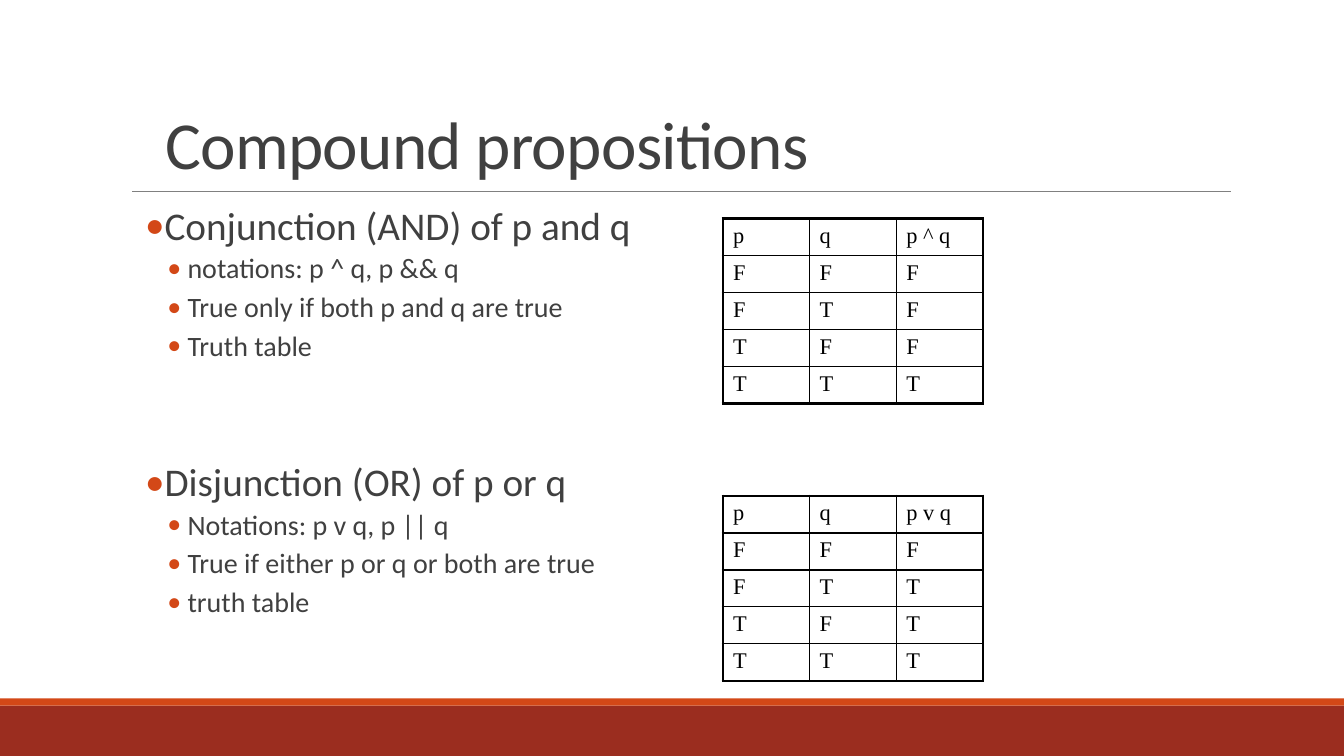
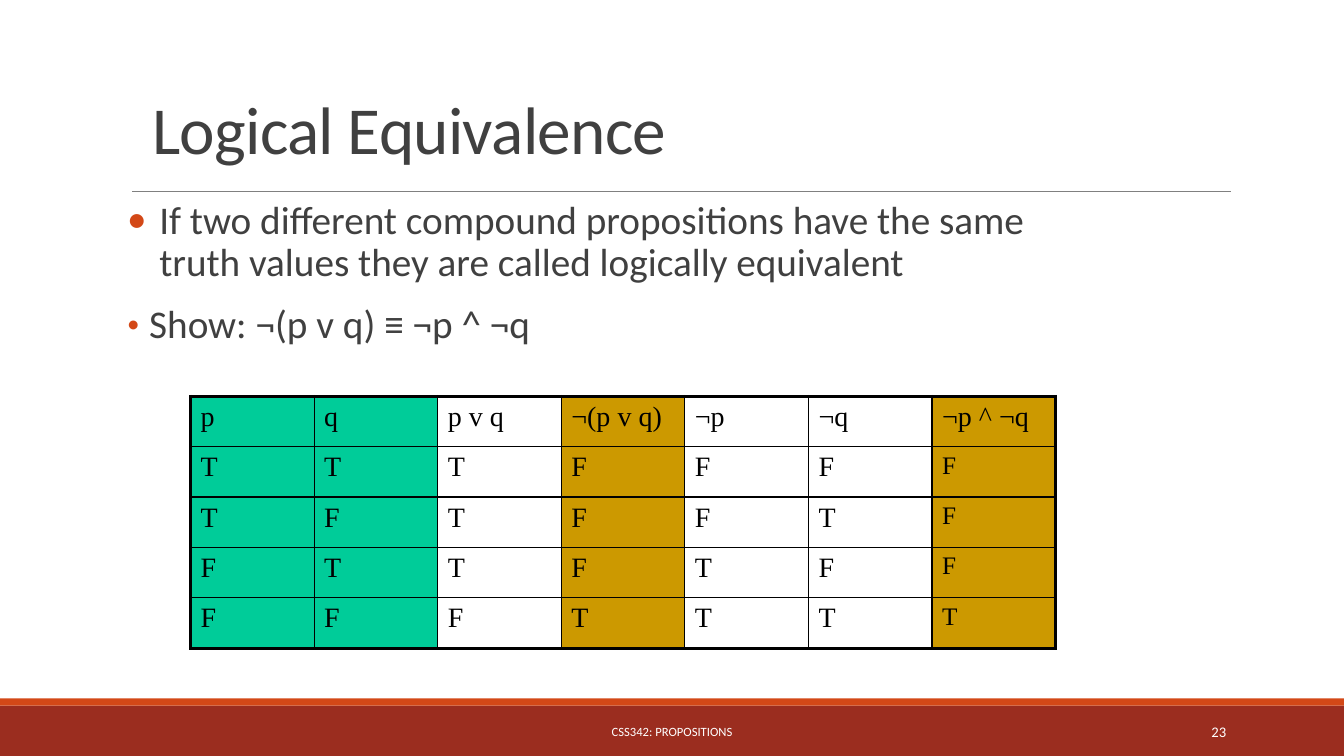
from lxml.etree import SubElement
from pptx import Presentation
from pptx.dml.color import RGBColor
from pptx.enum.shapes import MSO_CONNECTOR, MSO_SHAPE
from pptx.enum.text import MSO_ANCHOR, MSO_AUTO_SIZE, PP_ALIGN
from pptx.oxml.ns import qn
from pptx.util import Inches, Pt

COLORS = {
    "band": "9B2D1F",
    "accent": "D34817",
    "rule": "808080",
    "text": "404040",
    "white": "FFFFFF",
    "black": "000000",
    "inputs": "00CC99",
    "compared": "CC9900",
}
BODY_FONT = "Calibri"
TABLE_FONT = "Times New Roman"
LAYOUT_TITLE_ONLY = 5
THIN, THICK = 1, 2.25


def color(name):
    return RGBColor.from_string(COLORS[name])


def add_span(para, text, size, color_name="text", font=BODY_FONT):
    span = para.add_run()
    span.text = text
    span.font.size = Pt(size)
    span.font.name = font
    span.font.color.rgb = color(color_name)
    return span


# Shared slide parts
def add_bar(page, top, height, color_name):
    bar = page.shapes.add_shape(
        MSO_SHAPE.RECTANGLE, 0, Inches(top), Inches(13.33), Inches(height))
    bar.shadow.inherit = False
    bar.fill.solid()
    bar.fill.fore_color.rgb = color(color_name)
    bar.line.fill.background()


def add_rule(page):
    rule = page.shapes.add_connector(
        MSO_CONNECTOR.STRAIGHT, Inches(1.31), Inches(1.9), Inches(12.21), Inches(1.9))
    rule.line.color.rgb = color("rule")
    rule.line.width = Pt(0.5)
    SubElement(rule.element.spPr, qn("a:effectLst"))


def place_title(page, text, left, top, width, height):
    title = page.shapes.title
    title.left, title.top = Inches(left), Inches(top)
    title.width, title.height = Inches(width), Inches(height)
    frame = title.text_frame
    frame.word_wrap = True
    frame.auto_size = MSO_AUTO_SIZE.NONE
    frame.vertical_anchor = MSO_ANCHOR.BOTTOM
    para = frame.paragraphs[0]
    para.alignment = PP_ALIGN.LEFT
    para.line_spacing = 0.85
    span = add_span(para, text, 48)
    span.font._element.set("spc", "-50")


def add_page(deck, title, title_place):
    page = deck.slides.add_slide(deck.slide_layouts[LAYOUT_TITLE_ONLY])
    add_bar(page, 7, 0.5, "band")
    add_bar(page, 6.93, 0.07, "accent")
    add_rule(page)
    place_title(page, title, *title_place)
    return page


def add_footer_text(page, text, left, width, size, alignment):
    box = page.shapes.add_textbox(Inches(left), Inches(7.06), Inches(width), Inches(0.4))
    frame = box.text_frame
    frame.word_wrap = True
    frame.vertical_anchor = MSO_ANCHOR.MIDDLE
    para = frame.paragraphs[0]
    para.alignment = alignment
    add_span(para, text, size, "white")


# Bulleted text
def add_body(page, left, top, width, height):
    box = page.shapes.add_textbox(Inches(left), Inches(top), Inches(width), Inches(height))
    frame = box.text_frame
    frame.word_wrap = True
    frame.margin_left = frame.margin_right = 0
    return frame


def add_bullet(frame, text, size=28, margin=0.1, hanging=0.1,
               before=12, after=2, bullet_percent=100):
    first = frame.paragraphs[0]
    para = frame.add_paragraph() if first.runs else first
    para.line_spacing = 0.9
    para.space_before, para.space_after = Pt(before), Pt(after)
    props = para._p.get_or_add_pPr()
    props.set("marL", str(Inches(margin)))
    props.set("indent", str(-Inches(hanging)))
    bullet_color = SubElement(props, qn("a:buClr"))
    SubElement(bullet_color, qn("a:srgbClr"), val=COLORS["accent"])
    SubElement(props, qn("a:buSzPct"), val=str(bullet_percent * 1000))
    SubElement(props, qn("a:buFont"), typeface=BODY_FONT)
    SubElement(props, qn("a:buChar"), char="•")
    add_span(para, text, size)


def add_topic(frame, heading, details, before=12):
    add_bullet(frame, heading, before=before)
    for detail in details:
        add_bullet(frame, detail, 20, margin=0.42, hanging=0.2, before=2, after=4)


# Truth tables
def set_borders(cell, widths):
    props = cell._tc.get_or_add_tcPr()
    for side, width in widths.items():
        line = SubElement(props, qn(f"a:ln{side}"), w=str(Pt(width)))
        fill = SubElement(line, qn("a:solidFill"))
        SubElement(fill, qn("a:srgbClr"), val=COLORS["black"])


def add_truth_table(page, place, header, value_rows, size, fills=None, value_sizes=None):
    fills, value_sizes = fills or {}, value_sizes or {}
    left, top, width, row_height = place
    rows = [header, *value_rows]
    last_row, last_column = len(rows) - 1, len(header) - 1
    table = page.shapes.add_table(
        len(rows), len(header), Inches(left), Inches(top),
        Inches(width), Inches(row_height * len(rows))).table
    table.first_row = table.horz_banding = False
    for r, row in enumerate(rows):
        table.rows[r].height = Inches(row_height)
        for c, text in enumerate(row):
            cell = table.cell(r, c)
            set_borders(cell, {
                "L": THICK if c == 0 else THIN,
                "R": THICK if c == last_column else THIN,
                "T": THICK if r == 0 else THIN,
                "B": THICK if r == last_row else THIN,
            })
            if c in fills:
                cell.fill.solid()
                cell.fill.fore_color.rgb = color(fills[c])
            else:
                cell.fill.background()
            text_size = value_sizes.get(c, size) if r else size
            add_span(cell.text_frame.paragraphs[0], text, text_size, "black", TABLE_FONT)


# Slides
def build_compound(deck):
    page = add_page(deck, "Compound propositions", (1.54, 0.62, 8.5, 1.25))
    body = add_body(page, 1.44, 2, 5.5, 4.92)
    add_topic(body, "Conjunction (AND) of p and q", [
        "notations: p ^ q, p && q",
        "True only if both p and q are true",
        "Truth table",
    ])
    add_topic(body, "Disjunction (OR) of p or q", [
        "Notations: p v q, p || q",
        "True if either p or q or both are true",
        "truth table",
    ], before=68)
    for top, formula, values in [
        (2.17, "p ^ q", ["FFF", "FTF", "TFF", "TTT"]),
        (4.92, "p v q", ["FFF", "FTT", "TFT", "TTT"]),
    ]:
        add_truth_table(page, (7.17, top, 2.58, 0.33), ["p", "q", formula], values, 16)


def build_equivalence(deck):
    page = add_page(deck, "Logical Equivalence", (1.41, 0.32, 9.59, 1.4))
    body = add_body(page, 1.26, 1.94, 9.25, 1.8)
    add_bullet(body, "If two different compound propositions have the same "
               "truth values they are called logically equivalent",
               margin=0.32, hanging=0.32)
    add_bullet(body, "Show: ¬(p v q) ≡ ¬p ^ ¬q",
               margin=0.22, hanging=0.22, bullet_percent=64)
    add_truth_table(
        page, (1.89, 3.93, 8.58, 0.5),
        ["p", "q", "p v q", "¬(p v q)", "¬p", "¬q", "¬p ^ ¬q"],
        ["TTTFFFF", "TFTFFTF", "FTTFTFF", "FFFTTTT"], 20,
        fills={0: "inputs", 1: "inputs", 3: "compared", 6: "compared"},
        value_sizes={6: 18})
    add_footer_text(page, "CSS342: PROPOSITIONS", 4.03, 5.27, 9, PP_ALIGN.CENTER)
    add_footer_text(page, "23", 10.83, 1.43, 10.5, PP_ALIGN.RIGHT)


def main():
    deck = Presentation()
    deck.slide_width, deck.slide_height = Inches(13.33), Inches(7.5)
    build_compound(deck)
    build_equivalence(deck)
    deck.save("out.pptx")


if __name__ == "__main__":
    main()
